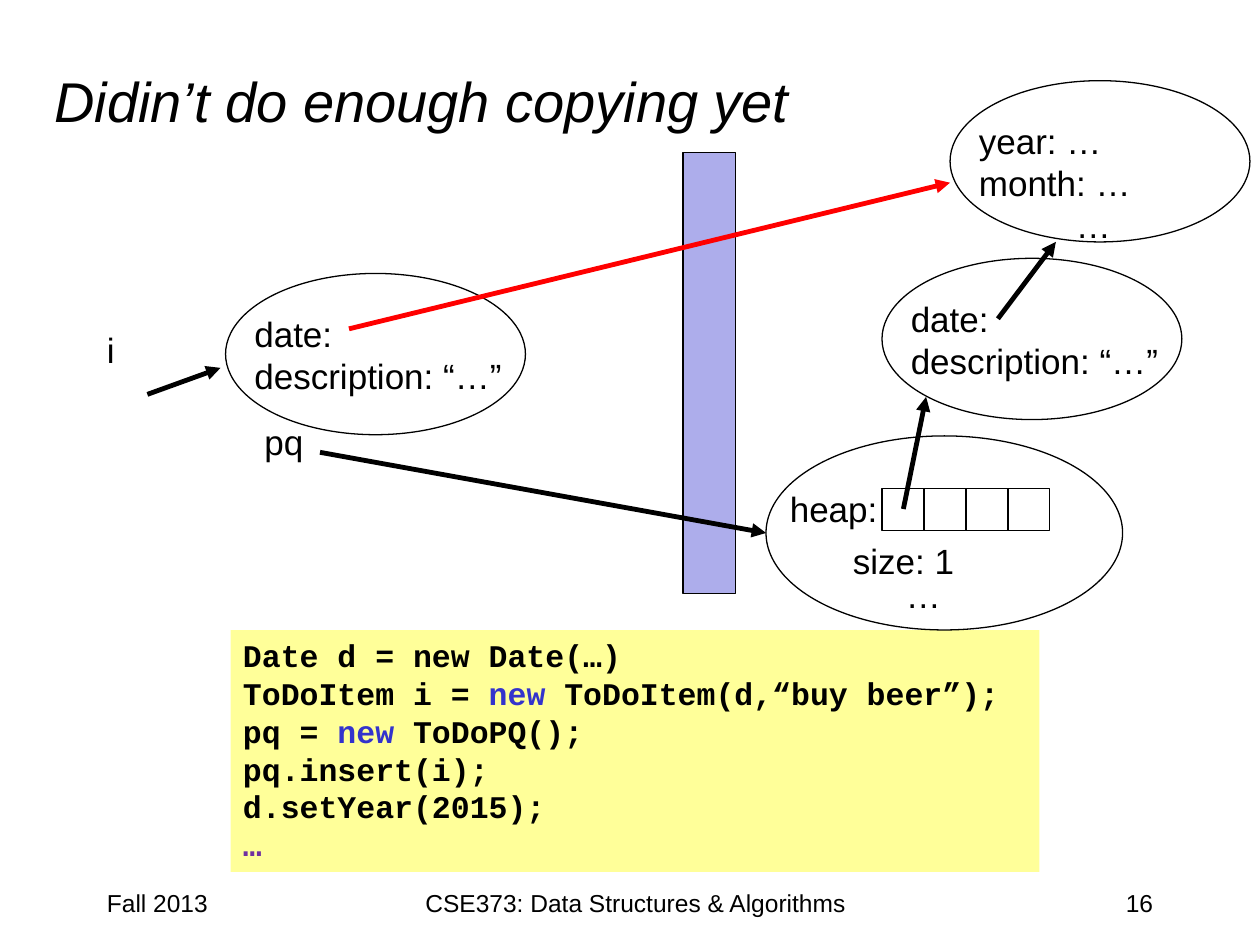
from lxml import etree
from pptx import Presentation
from pptx.dml.color import RGBColor
from pptx.enum.shapes import MSO_CONNECTOR as CONN, MSO_SHAPE as SHAPE
from pptx.enum.text import MSO_ANCHOR as ANCHOR, PP_ALIGN as ALIGN
from pptx.oxml.ns import qn
from pptx.util import Inches, Pt

BLACK, RED, BLUE, PURPLE = "000000", "FF0000", "3333CC", "7030A0"
CODE = [
    [("Date d = new Date(…)", BLACK)],
    [("ToDoItem i = ", BLACK), ("new ", BLUE), ("ToDoItem(d,“buy beer”);", BLACK)],
    [("pq = ", BLACK), ("new ", BLUE), ("ToDoPQ();", BLACK)],
    [("pq.insert(i);", BLACK)],
    [("d.setYear(2015);", BLACK)],
    [("…", PURPLE)],
]


def rgb(value):
    """Turn a hex string into a colour."""
    return RGBColor.from_string(value)


def style_run(r, size, color=BLACK, font="Arial", bold=False, italic=False):
    """Set the font of one run."""
    f = r.font
    f.name, f.size, f.bold, f.italic = font, Pt(size), bold, italic
    f.color.rgb = rgb(color)


def add_title(s, text):
    """Fill and place the title placeholder."""
    sp = s.shapes.title
    sp.left, sp.top, sp.width, sp.height = map(Inches, (0.33, 0.17, 8.5, 1.25))
    tf = sp.text_frame
    tf.text = text
    tf.vertical_anchor = ANCHOR.MIDDLE
    p = tf.paragraphs[0]
    p.alignment = ALIGN.LEFT
    style_run(p.runs[0], 32, italic=True)


def add_text(shapes, text, x, y, w, h, size=20, align=ALIGN.LEFT, wrap=True):
    """Add a text box with one paragraph per line of text."""
    tf = shapes.add_textbox(*map(Inches, (x, y, w, h))).text_frame
    tf.text = text
    tf.word_wrap = wrap
    for p in tf.paragraphs:
        p.alignment = align
        style_run(p.runs[0], size)
    return tf


def add_outline(shapes, kind, x, y, w, h, fill=None, line=BLACK):
    """Add a preset shape with optional fill and thin outline."""
    sp = shapes.add_shape(kind, *map(Inches, (x, y, w, h)))
    sp.shadow.inherit = False
    if fill:
        sp.fill.solid()
        sp.fill.fore_color.rgb = rgb(fill)
    else:
        sp.fill.background()
    if line:
        sp.line.color.rgb = rgb(line)
        sp.line.width = Pt(0.75)
    else:
        sp.line.fill.background()
    return sp


def add_object(s, text, x, y, text_h):
    """Add a grouped ellipse with the fields of an object."""
    shapes = s.shapes.add_group_shape().shapes
    add_outline(shapes, SHAPE.OVAL, x, y, 2.38, 1.28)
    return add_text(shapes, text, x + 0.13, y + 0.26, 2.49, text_h)


def add_arrow(s, x1, y1, x2, y2, color=BLACK):
    """Add a thick straight arrow."""
    cn = s.shapes.add_connector(CONN.STRAIGHT, *map(Inches, (x1, y1, x2, y2)))
    cn.line.color.rgb = rgb(color)
    cn.line.width = Pt(2.75)
    etree.SubElement(cn.line._get_or_add_ln(), qn("a:tailEnd"), type="triangle")
    etree.SubElement(cn._element.spPr, qn("a:effectLst"))


def add_code(s):
    """Add the code listing on its yellow panel."""
    sp = add_outline(s.shapes, SHAPE.RECTANGLE, 1.83, 5, 6.42, 1.92, "FFFF99", None)
    tf = sp.text_frame
    tf.vertical_anchor = ANCHOR.TOP
    tf.word_wrap = True
    for i, parts in enumerate(CODE):
        p = tf.add_paragraph() if i else tf.paragraphs[0]
        p.alignment = ALIGN.LEFT
        for text, color in parts:
            r = p.add_run()
            r.text = text
            style_run(r, 18, color, "Courier New", bold=True)


def add_heap(s):
    """Add the priority queue object with its array."""
    for i in range(4):
        add_outline(s.shapes, SHAPE.RECTANGLE, 7 + i / 3, 3.88, 0.33, 0.33)
    add_outline(s.shapes, SHAPE.OVAL, 6.08, 3.46, 2.83, 1.54)
    add_text(s.shapes, "heap:", 6.17, 3.82, 0.9, 0.44, wrap=False)
    add_text(s.shapes, "size: 1", 6.67, 4.23, 1.08, 0.44)
    add_text(s.shapes, "…", 7.09, 4.5, 1.08, 0.44)


def main():
    """Build the slide and save it."""
    prs = Presentation()
    prs.slide_width, prs.slide_height = Inches(10), Inches(7.5)
    s = prs.slides.add_slide(prs.slide_layouts[5])
    add_title(s, "Didin’t do enough copying yet")
    add_text(s.shapes, "Fall 2013", 0.75, 7, 2.08, 0.5, 14)
    add_text(s.shapes, "16", 7.17, 7, 2.08, 0.5, 14, ALIGN.RIGHT)
    add_text(s.shapes, "CSE373: Data Structures & Algorithms",
             3.17, 7, 3.75, 0.5, 14, ALIGN.CENTER)
    add_code(s)
    add_outline(s.shapes, SHAPE.RECTANGLE, 5.42, 1.21, 0.42, 3.5, "ADADEB")
    add_heap(s)
    add_text(s.shapes, "pq", 2, 3.29, 0.83, 0.44)
    add_text(s.shapes, "i", 0.75, 2.56, 0.83, 0.44)

    item = "date:\ndescription: “…”"
    add_object(s, item, 7, 2.05, 0.77)
    add_object(s, item, 1.79, 2.17, 0.77)
    date = add_object(s, "year: …\nmonth: …\n…", 7.54, 0.64, 1.11)
    date.paragraphs[2]._p.get_or_add_pPr().set("marL", str(Inches(0.77)))

    add_arrow(s, 2.54, 3.59, 6.08, 4.23)
    add_arrow(s, 7.17, 4.04, 7.35, 3.15)
    add_arrow(s, 7.92, 2.53, 8.38, 1.92)
    add_arrow(s, 1.17, 3.13, 1.75, 2.92)
    add_arrow(s, 2.77, 2.61, 7.54, 1.45, RED)
    prs.save("out.pptx")


if __name__ == "__main__":
    main()
